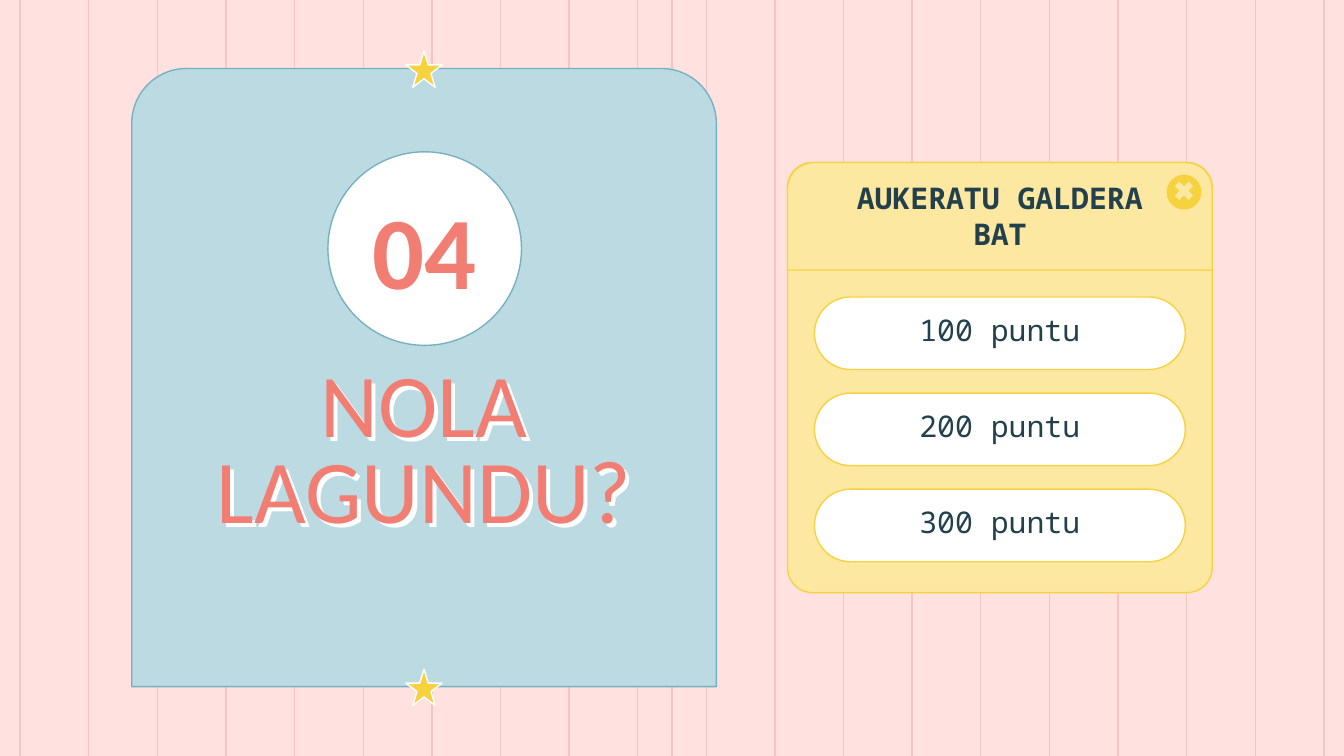
from lxml import etree
from pptx import Presentation
from pptx.dml.color import RGBColor
from pptx.enum.shapes import MSO_CONNECTOR, MSO_SHAPE
from pptx.enum.text import MSO_ANCHOR, MSO_AUTO_SIZE, PP_ALIGN
from pptx.oxml.ns import qn
from pptx.util import Inches, Pt

STRAIGHT = MSO_CONNECTOR.STRAIGHT
OVAL = MSO_SHAPE.OVAL
STAR = MSO_SHAPE.STAR_5_POINT
ROUNDED = MSO_SHAPE.ROUNDED_RECTANGLE
ROUND_TOP = MSO_SHAPE.ROUND_2_SAME_RECTANGLE
CROSS = MSO_SHAPE.MATH_MULTIPLY
MIDDLE = MSO_ANCHOR.MIDDLE
CENTER = PP_ALIGN.CENTER
NO_AUTOFIT = MSO_AUTO_SIZE.NONE

TITLE = "NOLA LAGUNDU?"
NUMBER = "04"
MENU_HEADING = "AUKERATU GALDERA BAT"
MENU_OPTIONS = ["100 puntu", "200 puntu", "300 puntu"]

TITLE_FONT = "Calibri"
MENU_FONT = "Noto Sans Mono"
PINK, STRIPE, CORAL = "FFE1DF", "F2C6C2", "F27D72"
BLUE, BLUE_EDGE = "BCDAE2", "76B1C1"
CREAM, YELLOW = "FDE8A1", "F7D23F"
WHITE, INK = "FFFFFF", "23414C"

WIDTH = 10
HEIGHT = WIDTH * 9 / 16
STRIPE_COUNT, FIRST_STRIPE, LAST_STRIPE = 20, 0.15, 9.85
STAR_TOPS = [0.38, 4.98]
FIRST_OPTION, LAST_OPTION = 2.21, 3.64


def color(hex_string):
    return RGBColor.from_string(hex_string)


def add_stripe(slide, x):
    stripe = slide.shapes.add_connector(
        STRAIGHT, Inches(x), Inches(0), Inches(x), Inches(HEIGHT))
    stripe.line.color.rgb = color(STRIPE)
    stripe.line.width = Pt(0.75)
    etree.SubElement(stripe.element.spPr, qn("a:effectLst"))


def add_shape(slide, kind, box, fill, edge=None, corners=()):
    shape = slide.shapes.add_shape(kind, *map(Inches, box))
    shape.shadow.inherit = False
    for index, corner in enumerate(corners):
        shape.adjustments[index] = corner
    shape.fill.solid()
    shape.fill.fore_color.rgb = color(fill)
    if edge:
        shape.line.color.rgb = color(edge)
        shape.line.width = Pt(0.75)
    else:
        shape.line.fill.background()
    return shape


def write(shape, text, font, size, hex_string, bold=False,
          margins=(0.1, 0.1, 0.1, 0.1), line_spacing=1.0):
    frame = shape.text_frame
    frame.word_wrap = True
    frame.auto_size = NO_AUTOFIT
    frame.vertical_anchor = MIDDLE
    (frame.margin_left, frame.margin_top,
     frame.margin_right, frame.margin_bottom) = map(Inches, margins)
    paragraph = frame.paragraphs[0]
    paragraph.alignment = CENTER
    paragraph.line_spacing = line_spacing
    paragraph.space_before = Pt(0)
    run = paragraph.add_run()
    run.text = text
    run.font.name = font
    run.font.size = Pt(size)
    run.font.bold = bold
    run.font.color.rgb = color(hex_string)


def place_in_front(placeholder, box):
    (placeholder.left, placeholder.top,
     placeholder.width, placeholder.height) = map(Inches, box)
    placeholder.element.getparent().append(placeholder.element)


def add_hard_shadow(shape, hex_string):
    effects = etree.SubElement(shape.element.spPr, qn("a:effectLst"))
    shadow = etree.SubElement(
        effects, qn("a:outerShdw"), dist=str(Inches(0.04)), dir="2400000",
        algn="bl", rotWithShape="0")
    etree.SubElement(shadow, qn("a:srgbClr"), val=hex_string)


def add_title_card(slide):
    add_shape(slide, ROUND_TOP, (0.98, 0.51, 4.35, 4.6), BLUE, BLUE_EDGE, (0.094, 0))
    for top in STAR_TOPS:
        add_shape(slide, STAR, (3.02, top, 0.27, 0.27), YELLOW, WHITE)
    add_shape(slide, OVAL, (2.44, 1.13, 1.44, 1.44), WHITE, BLUE_EDGE)

    title, number = slide.placeholders
    place_in_front(title, (1.12, 2.88, 4.07, 1.01))
    write(title, TITLE, TITLE_FONT, 48, CORAL, line_spacing=0.8)
    add_hard_shadow(title, WHITE)
    place_in_front(number, (2.44, 1.34, 1.44, 1.01))
    write(number, NUMBER, TITLE_FONT, 55, CORAL, bold=True)


def add_menu(slide):
    add_shape(slide, ROUNDED, (5.86, 1.21, 3.16, 3.2), CREAM, YELLOW, (0.059,))
    heading = add_shape(
        slide, ROUND_TOP, (5.86, 1.21, 3.16, 0.8), CREAM, YELLOW, (0.242, 0))
    write(heading, MENU_HEADING, MENU_FONT, 16, INK, bold=True,
          margins=(0.4, 0.03, 0.4, 0.1))
    add_shape(slide, OVAL, (8.68, 1.3, 0.26, 0.26), YELLOW)
    add_shape(slide, CROSS, (8.71, 1.32, 0.2, 0.2), CREAM)

    step = (LAST_OPTION - FIRST_OPTION) / (len(MENU_OPTIONS) - 1)
    for index, label in enumerate(MENU_OPTIONS):
        box = (6.06, FIRST_OPTION + index * step, 2.76, 0.54)
        option = add_shape(slide, ROUNDED, box, WHITE, YELLOW, (0.5,))
        write(option, label, MENU_FONT, 16, INK, margins=(0.1, 0.05, 0.1, 0.1))


def main():
    presentation = Presentation()
    presentation.slide_width = Inches(WIDTH)
    presentation.slide_height = Inches(HEIGHT)
    slide = presentation.slides.add_slide(presentation.slide_layouts[0])
    slide.background.fill.solid()
    slide.background.fill.fore_color.rgb = color(PINK)

    gap = (LAST_STRIPE - FIRST_STRIPE) / (STRIPE_COUNT - 1)
    for index in range(STRIPE_COUNT):
        add_stripe(slide, FIRST_STRIPE + index * gap)
    add_stripe(slide, WIDTH / 2)

    add_title_card(slide)
    add_menu(slide)
    presentation.save("out.pptx")


if __name__ == "__main__":
    main()
